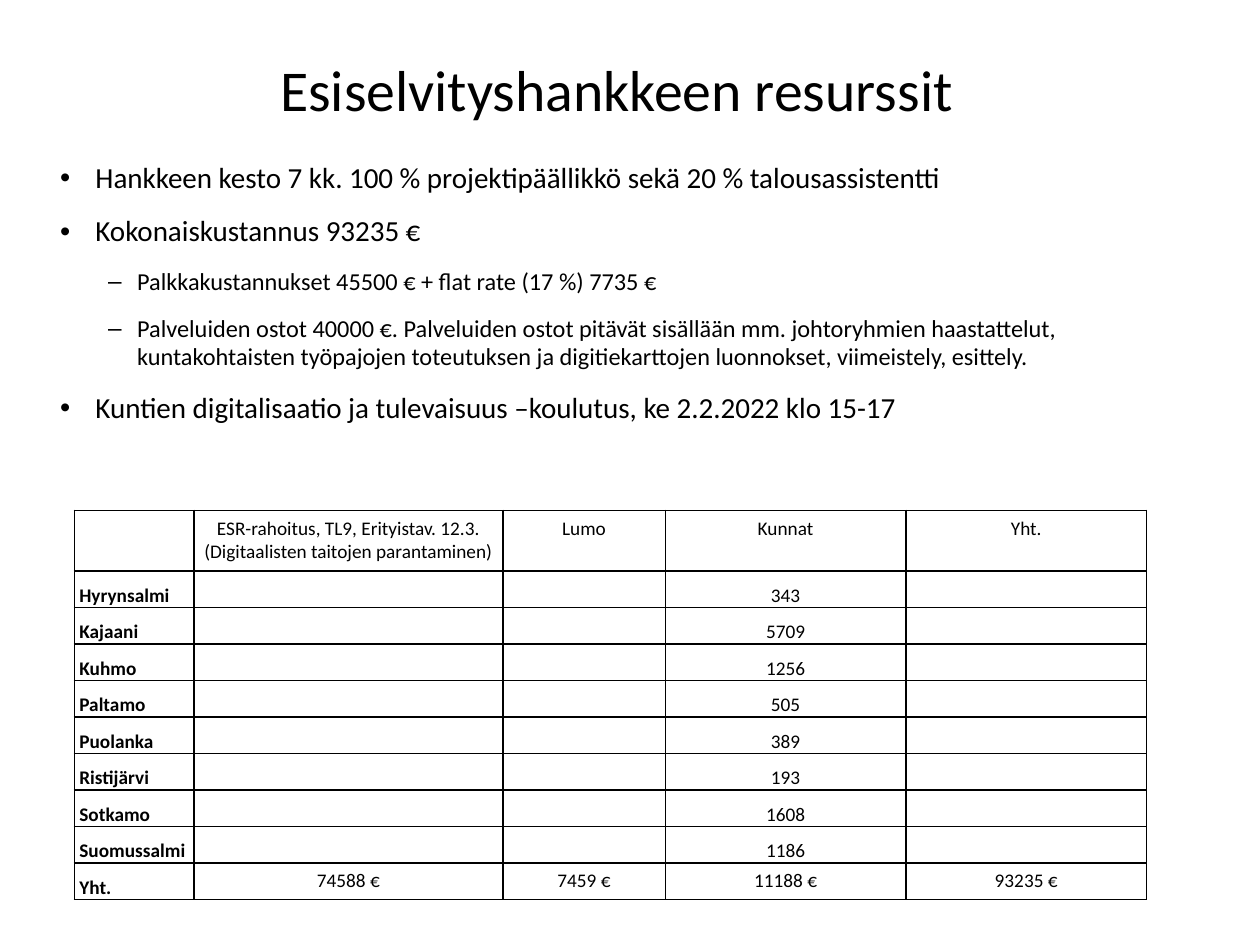
import pptx
import pptx.util
import pptx.dml.color
import pptx.enum.text
import pptx.oxml.ns
import lxml.etree
from dataclasses import dataclass

Inches, Pt = pptx.util.Inches, pptx.util.Pt
ALIGN, ANCHOR = pptx.enum.text.PP_ALIGN, pptx.enum.text.MSO_ANCHOR
qn = pptx.oxml.ns.qn


@dataclass(frozen=True)
class Theme:
    font: str = "Calibri"
    ink: str = "000000"
    title: float = 33
    levels: tuple = (16.6, 13.9)
    table: float = 11
    border: float = 1


THEME = Theme()

TITLE = "Esiselvityshankkeen resurssit"
POINTS = [
    (0, "Hankkeen kesto 7 kk. 100 % projektipäällikkö sekä 20 % talousassistentti"),
    (0, "Kokonaiskustannus 93235 €"),
    (1, "Palkkakustannukset 45500 € + flat rate (17 %) 7735 €"),
    (1, "Palveluiden ostot 40000 €. Palveluiden ostot pitävät sisällään mm. "
        "johtoryhmien haastattelut, kuntakohtaisten työpajojen toteutuksen ja "
        "digitiekarttojen luonnokset, viimeistely, esittely."),
    (0, "Kuntien digitalisaatio ja tulevaisuus –koulutus, ke 2.2.2022 klo 15-17"),
]
HEADINGS = ["", "ESR-rahoitus, TL9, Erityistav. 12.3. (Digitaalisten taitojen parantaminen)",
            "Lumo", "Kunnat", "Yht."]
SHARES = [
    ("Hyrynsalmi", "343"), ("Kajaani", "5709"), ("Kuhmo", "1256"), ("Paltamo", "505"),
    ("Puolanka", "389"), ("Ristijärvi", "193"), ("Sotkamo", "1608"), ("Suomussalmi", "1186"),
]
TOTALS = ["Yht.", "74588 €", "7459 €", "11188 €", "93235 €"]
BUDGET = [HEADINGS] + [[town, "", "", share, ""] for town, share in SHARES] + [TOTALS]

BULLETS = [("•", 0.28, -0.28), ("–", 0.61, -0.23)]
COLUMNS = [0.95, 2.45, 1.29, 1.91, 1.91]
HEADING_HEIGHT, ROW_HEIGHT = 0.48, 0.29
LEFT, WIDTH = 0.38, 9.03


def write(paragraph, text, size, bold=False, align=ALIGN.LEFT):
    paragraph.alignment = align
    if not text:
        lxml.etree.SubElement(paragraph._p, qn("a:endParaRPr"), sz=str(round(size * 100)))
        return
    run = paragraph.add_run()
    run.text = text
    run.font.name = THEME.font
    run.font.size = Pt(size)
    run.font.bold = bold
    run.font.color.rgb = pptx.dml.color.RGBColor.from_string(THEME.ink)


def add_frame(slide, top, height, anchor):
    frame = slide.shapes.add_textbox(Inches(LEFT), Inches(top), Inches(WIDTH), Inches(height)).text_frame
    frame.word_wrap = True
    frame.vertical_anchor = anchor
    return frame


def add_bullet(paragraph, level):
    mark, margin, indent = BULLETS[level]
    paragraph.level = level
    paragraph.line_spacing = 0.97
    paragraph.space_before = Pt(0.2 * THEME.levels[level])
    paragraph.space_after = Pt(8)
    props = paragraph._p.get_or_add_pPr()
    props.set("marL", str(Inches(margin)))
    props.set("indent", str(Inches(indent)))
    lxml.etree.SubElement(props, qn("a:buFont"), typeface="Arial")
    lxml.etree.SubElement(props, qn("a:buChar"), char=mark)


def add_borders(cell):
    props = cell._tc.get_or_add_tcPr()
    for index, side in enumerate(("lnL", "lnR", "lnT", "lnB")):
        line = lxml.etree.Element(qn("a:" + side), w=str(Pt(THEME.border)))
        fill = lxml.etree.SubElement(line, qn("a:solidFill"))
        lxml.etree.SubElement(fill, qn("a:srgbClr"), val=THEME.ink)
        props.insert(index, line)


def fill_cell(cell, text, row, column):
    label = column == 0
    share = bool(text) and 0 < row < len(BUDGET) - 1
    side = 0 if share and not label else 0.04
    edge = 0 if share or (label and text) else 0.05
    cell.margin_left = cell.margin_right = Inches(side)
    cell.margin_top = cell.margin_bottom = Inches(edge)
    cell.vertical_anchor = ANCHOR.TOP if edge else ANCHOR.BOTTOM
    cell.fill.background()
    add_borders(cell)
    write(cell.text_frame.paragraphs[0], text, THEME.table, bold=label,
          align=ALIGN.LEFT if label else ALIGN.CENTER)


def add_budget(slide):
    heights = [HEADING_HEIGHT] + [ROW_HEIGHT] * (len(BUDGET) - 1)
    table = slide.shapes.add_table(len(BUDGET), len(COLUMNS), Inches(0.59), Inches(4.05),
                                   Inches(sum(COLUMNS)), Inches(sum(heights))).table
    table.first_row = table.horz_banding = False
    for column, width in zip(table.columns, COLUMNS):
        column.width = Inches(width)
    for row, (height, texts) in enumerate(zip(heights, BUDGET)):
        table.rows[row].height = Inches(height)
        for column, text in enumerate(texts):
            fill_cell(table.cell(row, column), text, row, column)


def main():
    deck = pptx.Presentation()
    deck.slide_width, deck.slide_height = Inches(10), Inches(7.5)
    slide = deck.slides.add_slide(deck.slide_layouts[6])

    heading = add_frame(slide, 0.25, 0.9, ANCHOR.MIDDLE)
    write(heading.paragraphs[0], TITLE, THEME.title, align=ALIGN.CENTER)

    body = add_frame(slide, 1.23, 2.52, ANCHOR.TOP)
    for index, (level, point) in enumerate(POINTS):
        paragraph = body.add_paragraph() if index else body.paragraphs[0]
        add_bullet(paragraph, level)
        write(paragraph, point, THEME.levels[level])

    add_budget(slide)
    deck.save("out.pptx")


if __name__ == "__main__":
    main()
